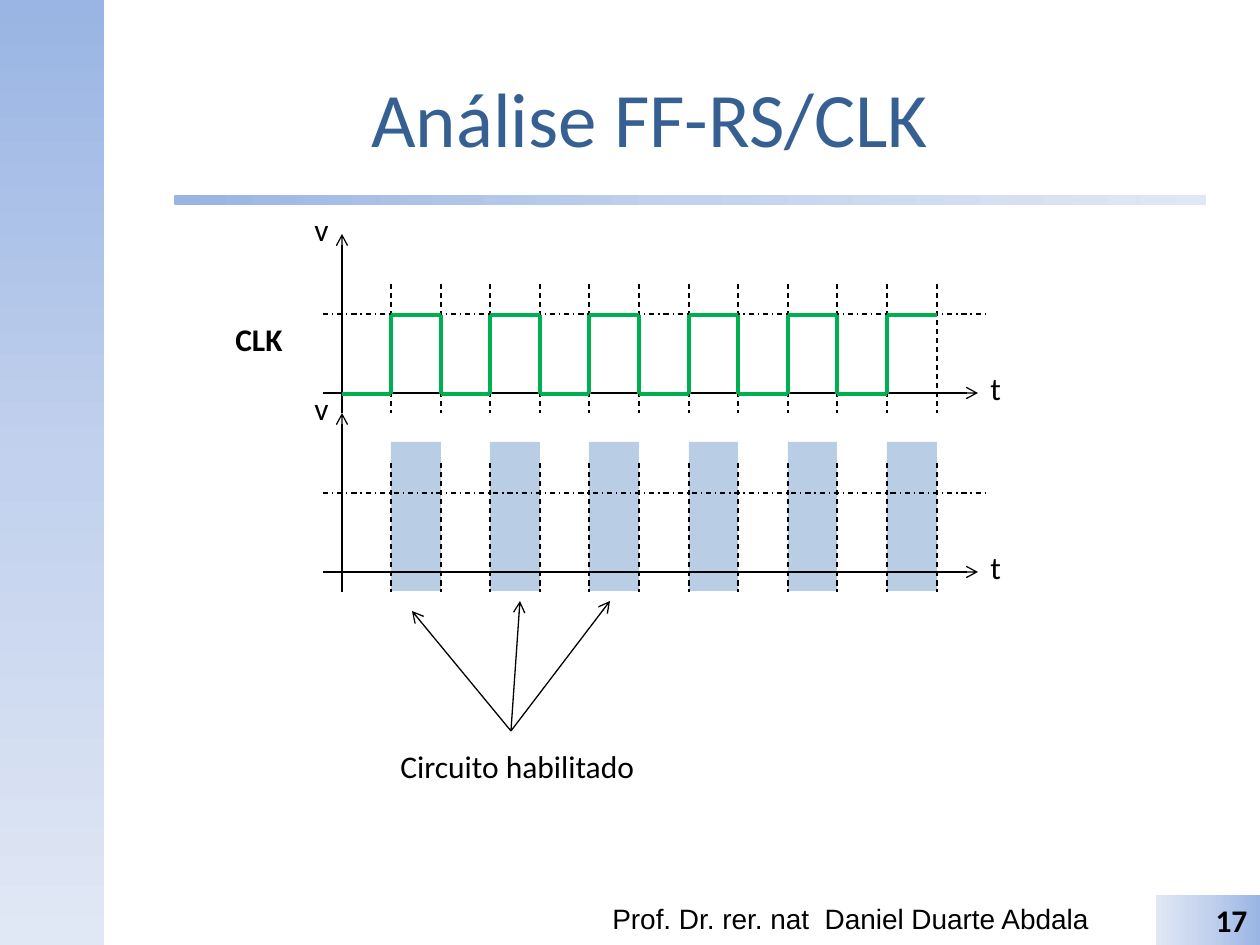
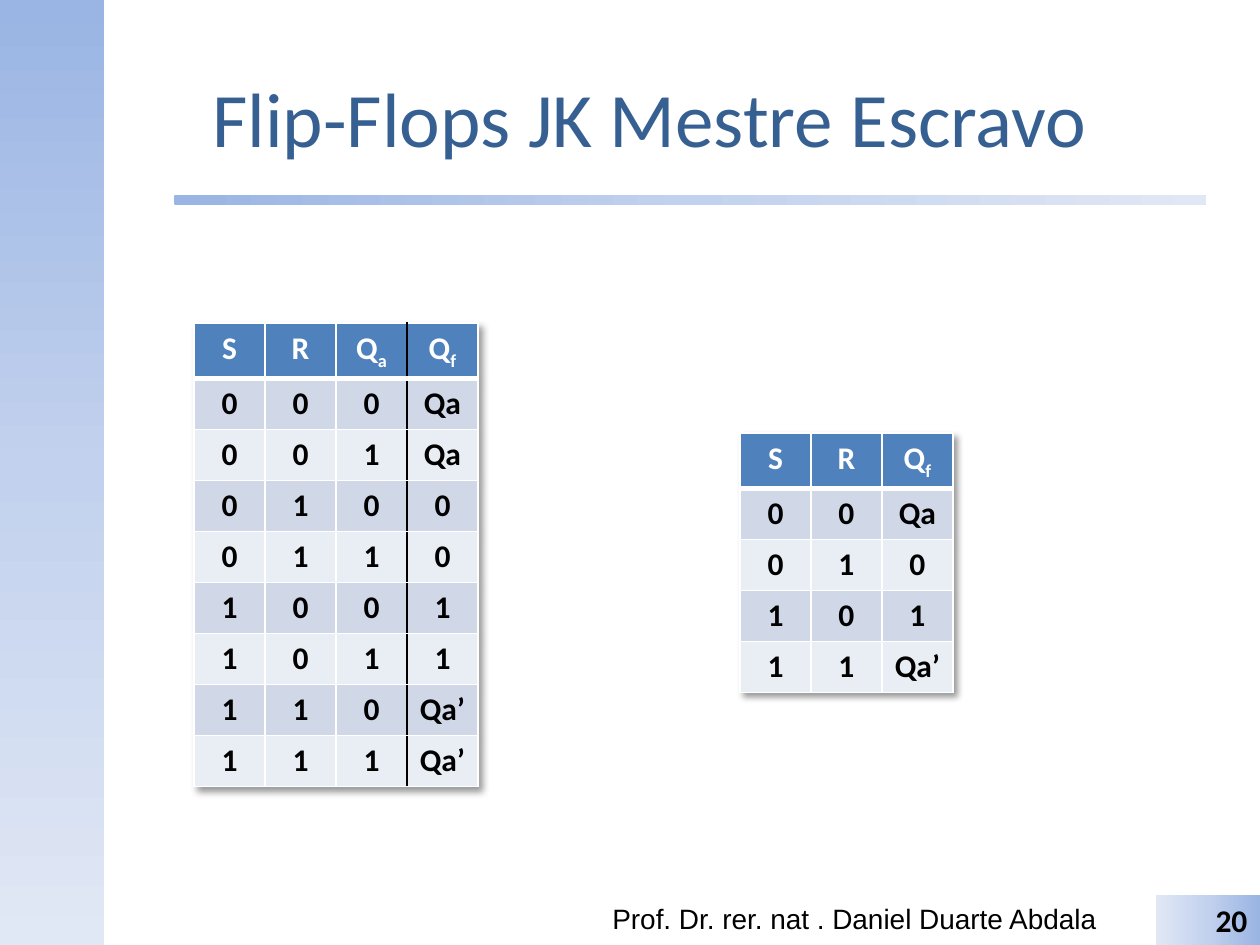
from copy import deepcopy

from lxml.etree import SubElement
from pptx import Presentation
from pptx.dml.color import RGBColor
from pptx.enum.dml import MSO_LINE
from pptx.enum.shapes import MSO_CONNECTOR, MSO_SHAPE as SHAPE
from pptx.enum.text import MSO_ANCHOR as ANCHOR, PP_ALIGN as ALIGN
from pptx.oxml import parse_xml
from pptx.oxml.ns import nsdecls, qn
from pptx.util import Inches, Pt

PX = 7257  # EMU in one px, 126 px to the inch

BLACK = RGBColor(0x00, 0x00, 0x00)
WHITE = RGBColor(0xFF, 0xFF, 0xFF)
TITLE_BLUE = RGBColor(0x37, 0x60, 0x92)
GRADIENT = [
    (0, RGBColor(0x9A, 0xB5, 0xE4)),
    (0.5, RGBColor(0xC2, 0xD1, 0xED)),
    (1, RGBColor(0xE1, 0xE8, 0xF5)),
]
ENABLED_BLUE = RGBColor(0xB9, 0xCD, 0xE5)
CLOCK_GREEN = RGBColor(0x00, 0xB0, 0x50)
HEADER_BLUE = RGBColor(0x4F, 0x81, 0xBD)
ROW_DARK = RGBColor(0xD0, 0xD8, 0xE8)
ROW_LIGHT = RGBColor(0xE9, 0xED, 0xF4)


def write(frame, text, size=18, color=BLACK, font="Calibri", bold=False, align=ALIGN.LEFT):
    """Fill a text frame; what follows an underscore is a subscript."""
    paragraph = frame.paragraphs[0]
    paragraph.alignment = align
    paragraph.font.size = Pt(size)
    paragraph.font.name = font
    paragraph.font.bold = bold
    paragraph.font.color.rgb = color
    for index, part in enumerate(text.split("_")):
        run = paragraph.add_run()
        run.text = part
        if index:
            run._r.get_or_add_rPr().set("baseline", "-25000")


def add_line(slide, start, end, color=BLACK, width=0.75, dash=None, arrow=False):
    """Draw a straight line between two points in px."""
    points = [value * PX for value in (*start, *end)]
    connector = slide.shapes.add_connector(MSO_CONNECTOR.STRAIGHT, *points)
    connector.line.color.rgb = color
    connector.line.width = Pt(width)
    if dash:
        connector.line.dash_style = dash
    if arrow:
        SubElement(connector.line._get_or_add_ln(), qn("a:tailEnd"), type="arrow")
    SubElement(connector._element.spPr, qn("a:effectLst"))


presentation = Presentation()
presentation.slide_width = Inches(10)
presentation.slide_height = Inches(7.5)

# Shared frame: side band, rule, title, footer and page number
PAGES = [
    ("Análise FF-RS/CLK", "Prof. Dr. rer. nat  Daniel Duarte Abdala", "17"),
    ("Flip-Flops JK Mestre Escravo", "Prof. Dr. rer. nat . Daniel Duarte Abdala", "20"),
]
BANDS = [
    (SHAPE.RECTANGLE, (0, 0, 104, 945), 270),
    (SHAPE.ROUNDED_RECTANGLE, (174, 195, 1032, 10), 0),
    (SHAPE.RECTANGLE, (1156, 895, 104, 50), 180),
]
for title, footer, number in PAGES:
    slide = presentation.slides.add_slide(presentation.slide_layouts[6])
    for kind, box, angle in BANDS:
        band = slide.shapes.add_shape(kind, *[value * PX for value in box])
        band.shadow.inherit = False
        band.line.fill.background()
        band.fill.gradient()
        band.fill.gradient_angle = angle
        stop_list = band._element.spPr.find(".//" + qn("a:gsLst"))
        stop_list.append(deepcopy(stop_list[0]))
        for stop, (position, color) in zip(band.fill.gradient_stops, GRADIENT):
            stop.position = position
            stop.color.rgb = color

    # The last band holds the page number
    band.text_frame.vertical_anchor = ANCHOR.TOP
    write(band.text_frame, number, bold=True, align=ALIGN.RIGHT)

    title_frame = slide.shapes.add_textbox(104 * PX, 38 * PX, 1092 * PX, 157 * PX).text_frame
    title_frame.word_wrap = True
    title_frame.vertical_anchor = ANCHOR.MIDDLE
    write(title_frame, title, 44, TITLE_BLUE, align=ALIGN.CENTER)

    footer_frame = slide.shapes.add_textbox(600 * PX, 895 * PX, 528 * PX, 50 * PX).text_frame
    footer_frame.word_wrap = True
    write(footer_frame, footer, 16, font="Arial")

timing_slide, table_slide = presentation.slides

# Timing diagram: twelve half periods
HALVES = 12
ticks = [342 + 595 * index // HALVES for index in range(HALVES + 1)]

# Periods in which the circuit is enabled
for left, right in zip(ticks[1::2], ticks[2::2]):
    block = timing_slide.shapes.add_shape(
        SHAPE.RECTANGLE, left * PX, 442 * PX, (right - left) * PX, 149 * PX)
    block.shadow.inherit = False
    block.fill.solid()
    block.fill.fore_color.rgb = ENABLED_BLUE
    block.line.fill.background()

# Axes, tick lines and threshold of both plots
for base in (393, 572):
    add_line(timing_slide, (323, base), (978, base), arrow=True)
    add_line(timing_slide, (ticks[0], base + 20), (ticks[0], base - 159), arrow=True)
    for tick in ticks[1:]:
        add_line(timing_slide, (tick, base - 109), (tick, base + 20), dash=MSO_LINE.DASH)
    add_line(timing_slide, (323, base - 79), (987, base - 79), dash=MSO_LINE.DASH_DOT)

# Clock wave
LOW, HIGH = 394, 315
for index in range(HALVES):
    level = HIGH if index % 2 else LOW
    add_line(timing_slide, (ticks[index], level), (ticks[index + 1], level), CLOCK_GREEN, 2.25)
    if index:
        add_line(timing_slide, (ticks[index], LOW), (ticks[index], HIGH), CLOCK_GREEN, 2.25)

# Arrows from the note to the enabled periods
for target in ((412, 611), (520, 601), (610, 601)):
    add_line(timing_slide, (511, 731), target, arrow=True)

# Labels
LABELS = [
    ("v", 302, 204, 40, False),
    ("t", 978, 363, 37, False),
    ("v", 302, 383, 40, False),
    ("t", 978, 542, 37, False),
    ("CLK", 223, 314, 73, True),
    ("Circuito habilitado", 388, 741, 262, False),
]
for text, left, top, width, bold in LABELS:
    label = timing_slide.shapes.add_textbox(left * PX, top * PX, width * PX, 50 * PX)
    label.text_frame.word_wrap = False
    write(label.text_frame, text, bold=bold)

# Truth tables: left, top, column with a black line on its left, rows
COLUMN, ROW = 71, 51
TABLES = [
    (194, 323, 3, [
        "S R Q_a Q_f",
        "0 0 0 Qa",
        "0 0 1 Qa",
        "0 1 0 0",
        "0 1 1 0",
        "1 0 0 1",
        "1 0 1 1",
        "1 1 0 Qa’",
        "1 1 1 Qa’",
    ]),
    (740, 433, None, [
        "S R Q_f",
        "0 0 Qa",
        "0 1 0",
        "1 0 1",
        "1 1 Qa’",
    ]),
]
TABLE_SHADOW = (
    f'<a:effectLst {nsdecls("a")}>'
    '<a:outerShdw blurRad="50800" dist="38100" dir="2700000" algn="tl" rotWithShape="0">'
    '<a:srgbClr val="000000"><a:alpha val="40000"/></a:srgbClr>'
    '</a:outerShdw></a:effectLst>'
)
for left, top, result_column, lines in TABLES:
    rows = [line.split() for line in lines]
    count = len(rows[0])
    table = table_slide.shapes.add_table(
        len(rows), count, left * PX, top * PX, count * COLUMN * PX, len(rows) * ROW * PX).table
    table._tbl.tblPr.insert(0, parse_xml(TABLE_SHADOW))
    for column in table.columns:
        column.width = COLUMN * PX
    for row_index, values in enumerate(rows):
        table.rows[row_index].height = ROW * PX
        is_header = row_index == 0
        for column_index, value in enumerate(values):
            cell = table.cell(row_index, column_index)
            write(cell.text_frame, value, color=WHITE if is_header else BLACK,
                  bold=True, align=ALIGN.CENTER)

            # Borders go in before the fill
            borders = [
                ("a:lnL", 1, BLACK if column_index == result_column else WHITE),
                ("a:lnR", 1, BLACK if column_index + 1 == result_column else WHITE),
                ("a:lnT", 3 if row_index == 1 else 1, WHITE),
                ("a:lnB", 3 if is_header else 1, WHITE),
            ]
            for tag, width, color in borders:
                border = SubElement(cell._tc.get_or_add_tcPr(), qn(tag), w=str(Pt(width)))
                fill = SubElement(border, qn("a:solidFill"))
                SubElement(fill, qn("a:srgbClr"), val=str(color))
            cell.fill.solid()
            cell.fill.fore_color.rgb = (
                HEADER_BLUE if is_header else ROW_DARK if row_index % 2 else ROW_LIGHT)

presentation.save("out.pptx")
